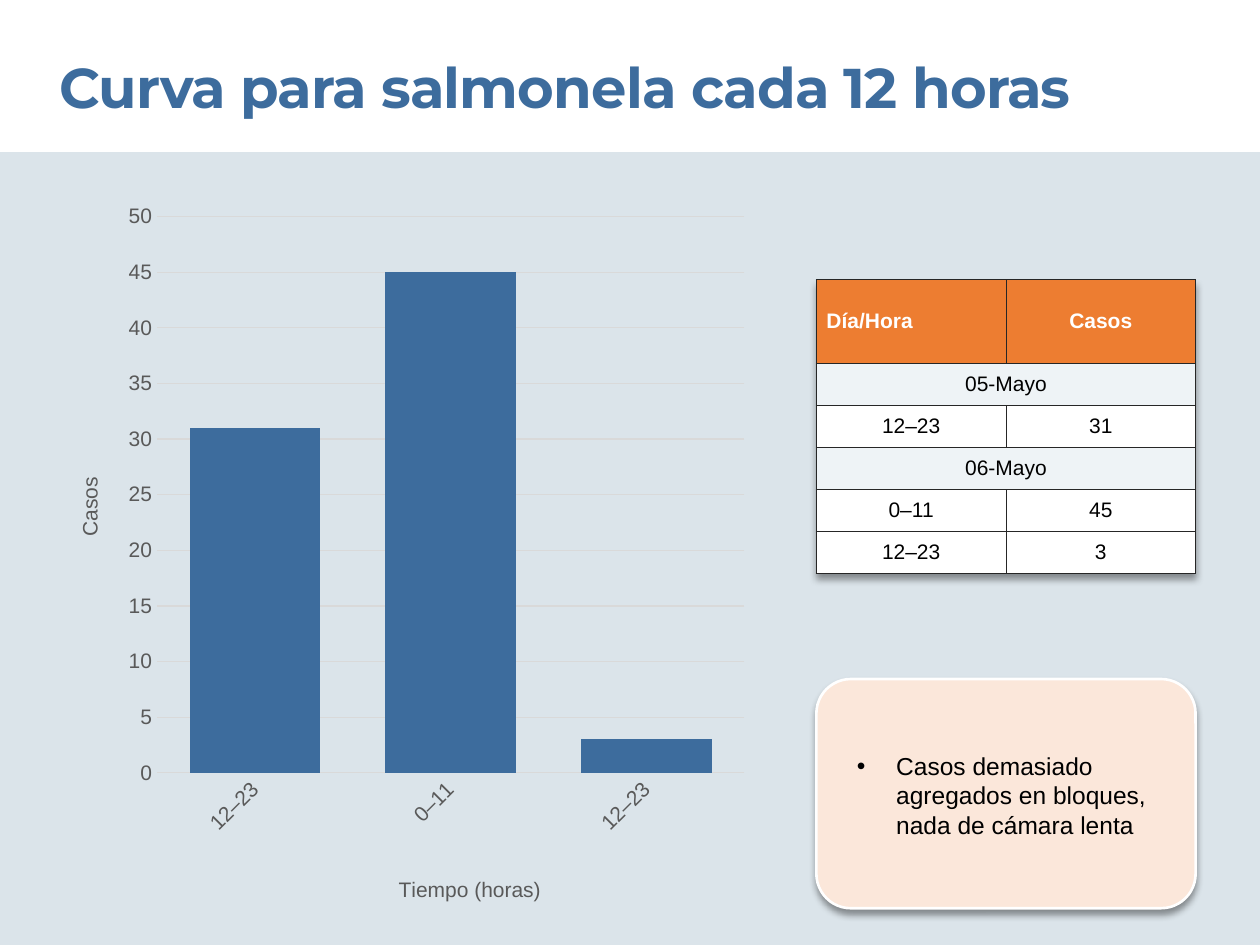
from pptx import Presentation, oxml, util as u
from pptx.chart import data as chart_data
from pptx.dml.color import RGBColor
from pptx.enum import chart as charts, shapes, text
from pptx.oxml import ns

Pt = u.Pt
THEME = {
    "blue": "3D6C9D", "panel": "DBE4EA", "card": "FBE7DA", "white": "FFFFFF",
    "black": "000000", "header": "ED7D31", "day": "EEF3F6", "border": "262626",
    "label": "595959", "grid": "D9D9D9",
    "title_size": 32, "body_size": 14, "small_size": 12,
    "title_font": "Montserrat", "body_font": "Arial",
}
SHADOW = (
    f'<a:outerShdw {ns.nsdecls("a")} blurRad="{Pt(4)}" dist="{Pt(3)}" dir="5400000" '
    f'algn="t" rotWithShape="0"><a:srgbClr val="{THEME["black"]}">'
    '<a:alpha val="40000"/></a:srgbClr></a:outerShdw>'
)


def style(font, color, size="small_size", name="body_font", bold=False):
    """Apply theme values to a font."""
    formats = {"name": THEME[name], "size": Pt(THEME[size]), "bold": bold}
    for key, value in formats.items():
        setattr(font, key, value)
    font.color.rgb = RGBColor.from_string(THEME[color])


def place(parent, index, **fractions):
    """Give a chart part a manual layout in fractions of the chart."""
    for old in parent.xpath("c:layout"):
        parent.remove(old)
    target = '<c:layoutTarget val="inner"/>' if "w" in fractions else ""
    modes = "".join(f'<c:{key}Mode val="edge"/>' for key in "xy")
    values = "".join(f'<c:{key} val="{value}"/>' for key, value in fractions.items())
    parent.insert(index, oxml.parse_xml(
        f'<c:layout {ns.nsdecls("c")}><c:manualLayout>{target}{modes}{values}'
        '</c:manualLayout></c:layout>'))


deck = Presentation()
deck.slide_width, deck.slide_height = Pt(720), Pt(540)
slide = deck.slides.add_slide(deck.slide_layouts[1])
title, body = slide.placeholders

# Background panel and note card
panel = slide.shapes.add_shape(
    shapes.MSO_SHAPE.RECTANGLE, Pt(0), Pt(87), Pt(720), Pt(453))
card = slide.shapes.add_shape(
    shapes.MSO_SHAPE.ROUNDED_RECTANGLE, Pt(466.5), Pt(388), Pt(216.7), Pt(131))
card.adjustments[0] = 0.15
for box, color in ((panel, "panel"), (card, "card")):
    box.shadow.inherit = False
    box.fill.solid()
    box.fill.fore_color.rgb = RGBColor.from_string(THEME[color])
panel.line.fill.background()
card.line.color.rgb = RGBColor.from_string(THEME["white"])
card.line.width = Pt(1.5)
card.element.xpath("p:spPr/a:effectLst")[0].append(oxml.parse_xml(SHADOW))

# Title and list, brought in front of the panel
texts = (
    (title, "Curva para salmonela cada 12 horas", (33.8, 30.2, 649.4, 39),
     ("blue", "title_size", "title_font", True)),
    (body, "Casos demasiado agregados en bloques, nada de cámara lenta",
     (489.6, 429.1, 165.6, 51), ("black", "body_size")),
)
frame_format = {
    "margin_left": 0, "margin_top": 0, "margin_right": 0, "margin_bottom": 0,
    "word_wrap": True, "auto_size": text.MSO_AUTO_SIZE.NONE,
    "vertical_anchor": text.MSO_ANCHOR.TOP,
}
for box, words, bounds, look in texts:
    slide.shapes.element.append(box.element)
    for key, value in zip(("left", "top", "width", "height"), bounds):
        setattr(box, key, Pt(value))
    for key, value in frame_format.items():
        setattr(box.text_frame, key, value)
    para = box.text_frame.paragraphs[0]
    para.alignment = text.PP_ALIGN.LEFT
    para.space_before = Pt(0)
    span = para.add_run()
    span.text = words
    style(span.font, *look)
title.element.xpath(".//a:r/a:rPr")[0].set("spc", "-50")
bullet = body.element.xpath(".//a:pPr")[0]
bullet.set("marL", str(Pt(22.5)))
bullet.set("indent", str(Pt(-22.5)))

# Case table: a row with one entry spans both columns
rows = (("Día/Hora", "Casos"), ("05-Mayo",), ("12–23", "31"),
        ("06-Mayo",), ("0–11", "45"), ("12–23", "3"))
table_frame = slide.shapes.add_table(
    len(rows), 2, Pt(466.5), Pt(159.8), Pt(216.7), Pt(168))
table = table_frame.table
table.horz_banding = False
for r, entries in enumerate(rows):
    table.rows[r].height = Pt(48 if r == 0 else 24)
    fill = "header" if r == 0 else "day" if len(entries) == 1 else "white"
    if len(entries) == 1:
        table.cell(r, 0).merge(table.cell(r, 1))
    for c in range(2):
        cell = table.cell(r, c)
        cell.fill.solid()
        cell.fill.fore_color.rgb = RGBColor.from_string(THEME[fill])
        cell.vertical_anchor = text.MSO_ANCHOR.MIDDLE
        cell.margin_left = cell.margin_right = Pt(5.8)
        if c < len(entries):
            para = cell.text_frame.paragraphs[0]
            para.alignment = (text.PP_ALIGN.LEFT if (r, c) == (0, 0)
                              else text.PP_ALIGN.CENTER)
            span = para.add_run()
            span.text = entries[c]
            style(span.font, "white" if r == 0 else "black", bold=r == 0)
for properties in table_frame.element.xpath(".//a:tcPr"):
    for index, side in enumerate("LRTB"):
        properties.insert(index, oxml.parse_xml(
            f'<a:ln{side} {ns.nsdecls("a")} w="{Pt(0.5)}"><a:solidFill>'
            f'<a:srgbClr val="{THEME["border"]}"/></a:solidFill></a:ln{side}>'))
effects = oxml.parse_xml(f'<a:effectLst {ns.nsdecls("a")}/>')
effects.append(oxml.parse_xml(SHADOW))
table_frame.element.xpath(".//a:tblPr")[0].insert(0, effects)

# Epidemic curve
data = chart_data.CategoryChartData()
data.categories = ["12–23", "0–11", "12–23"]
data.add_series("Casos", (31, 45, 3))
chart = slide.shapes.add_chart(
    charts.XL_CHART_TYPE.COLUMN_CLUSTERED,
    Pt(33.8), Pt(111.6), Pt(399.6), Pt(407.5), data).chart
chart.has_title = chart.has_legend = False
style(chart.font, "label")
plot = chart.plots[0]
plot.gap_width = 50
plot.vary_by_categories = False
bars = plot.series[0].format.fill
bars.solid()
bars.fore_color.rgb = RGBColor.from_string(THEME["blue"])

hours, cases = chart.category_axis, chart.value_axis
for axis, words, x, y in ((hours, "Tiempo (horas)", 0.48, 0.95),
                          (cases, "Casos", 0.02, 0.39)):
    axis.major_tick_mark = axis.minor_tick_mark = charts.XL_TICK_MARK.NONE
    style(axis.tick_labels.font, "label")
    span = axis.axis_title.text_frame.paragraphs[0].add_run()
    span.text = words
    style(span.font, "label")
    place(axis.axis_title.element, 1, x=x, y=y)
for key, value in {"minimum_scale": 0, "maximum_scale": 50, "major_unit": 5}.items():
    setattr(cases, key, value)
cases.format.line.fill.background()
for line in (hours.format.line, cases.major_gridlines.format.line):
    line.color.rgb = RGBColor.from_string(THEME["grid"])
    line.width = Pt(0.75)
for where, angle in ((".//c:catAx/c:txPr/a:bodyPr", -45),
                     (".//c:valAx/c:title//a:bodyPr", -90)):
    properties = chart.element.xpath(where)[0]
    properties.set("rot", str(angle * 60000))
    properties.set("vert", "horz")
place(chart.element.xpath(".//c:plotArea")[0], 0, x=0.14, y=0.03, w=0.84, h=0.78)

deck.save("out.pptx")
